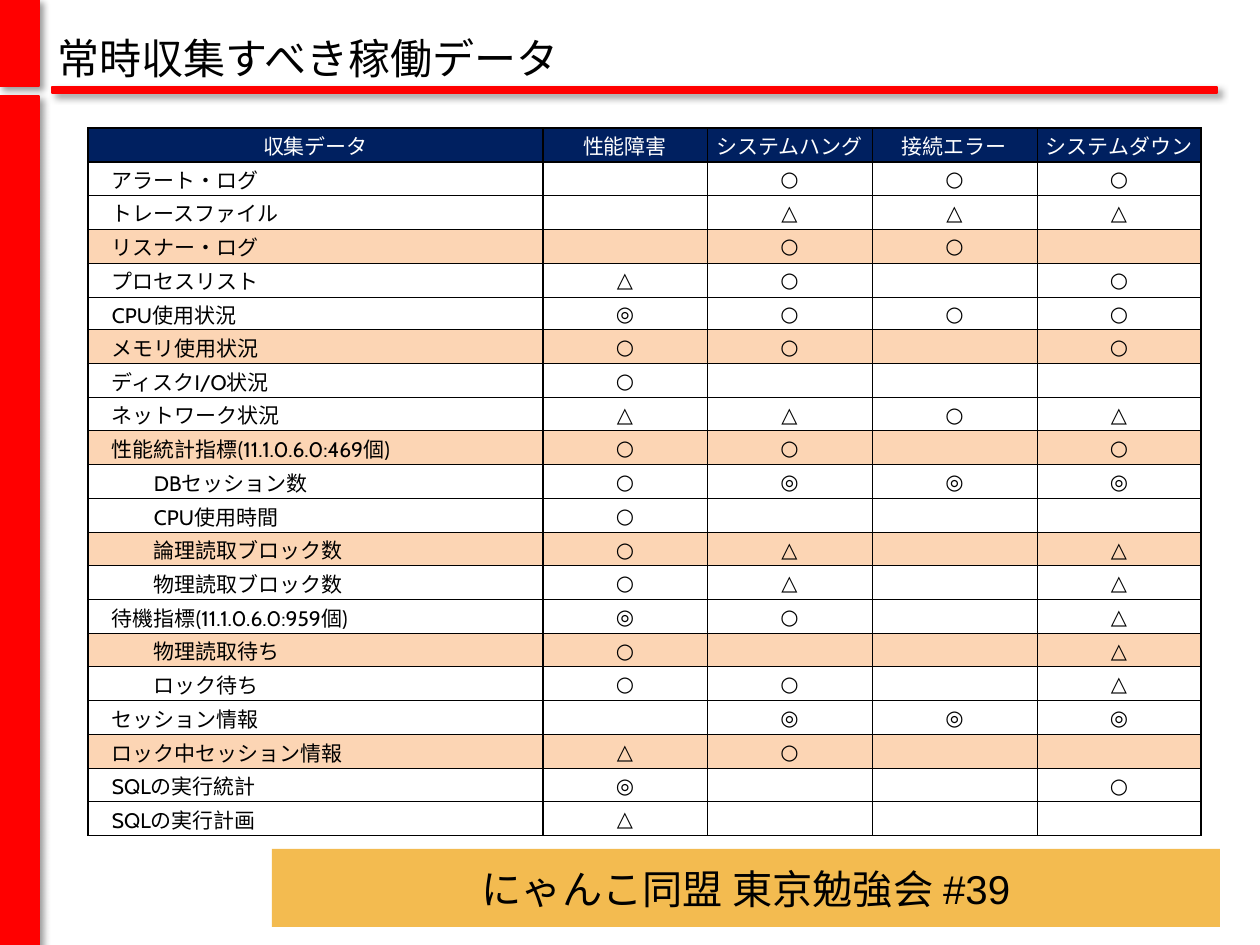
from lxml import etree
from pptx import Presentation, util as u
from pptx.dml.color import RGBColor
from pptx.enum import shapes, text
from pptx.oxml.ns import qn

TITLE = "常時収集すべき稼働データ"
FOOTER = "にゃんこ同盟 東京勉強会 #39"
HEADINGS = ("収集データ", "性能障害", "システムハング", "接続エラー", "システムダウン")
# Item, indent level, one mark per remaining column ("-" is an empty cell)
ITEMS = [
    ("アラート・ログ", 0, "-○○○"),
    ("トレースファイル", 0, "-△△△"),
    ("リスナー・ログ", 0, "-○○-"),
    ("プロセスリスト", 0, "△○-○"),
    ("CPU使用状況", 0, "◎○○○"),
    ("メモリ使用状況", 0, "○○-○"),
    ("ディスクI/O状況", 0, "○---"),
    ("ネットワーク状況", 0, "△△○△"),
    ("性能統計指標(11.1.0.6.0:469個)", 0, "○○-○"),
    ("DBセッション数", 1, "○◎◎◎"),
    ("CPU使用時間", 1, "○---"),
    ("論理読取ブロック数", 1, "○△-△"),
    ("物理読取ブロック数", 1, "○△-△"),
    ("待機指標(11.1.0.6.0:959個)", 0, "◎○-△"),
    ("物理読取待ち", 1, "○--△"),
    ("ロック待ち", 1, "○○-△"),
    ("セッション情報", 0, "-◎◎◎"),
    ("ロック中セッション情報", 0, "△○--"),
    ("SQLの実行統計", 0, "◎--○"),
    ("SQLの実行計画", 0, "△---"),
]
RED_BARS = [(0, 0, 39, 86), (0, 96, 39, 852), (52, 87, 1165, 6)]
TITLE_BOX = (45, 28, 762, 60)
FOOTER_BOX = (272, 849, 948, 78)
TABLE_BOX = (88, 128, 1113, 708)
ITEM_WIDTH = 455
ITEM_MARGIN, INDENT = 24, 42

RED = RGBColor(0xFF, 0x00, 0x00)
GOLD = RGBColor(0xF3, 0xBB, 0x50)
NAVY = RGBColor(0x00, 0x20, 0x60)
PEACH = RGBColor(0xFC, 0xD5, 0xB4)
WHITE = RGBColor(0xFF, 0xFF, 0xFF)
BLACK = RGBColor(0x00, 0x00, 0x00)


def px(n):
    return u.Emu(round(n * 914400 / 126))


def box(values):
    return [px(v) for v in values]


def split(total, count):
    """Whole-pixel sizes that add up to the total."""
    edges = [round(total * i / count) for i in range(count + 1)]
    return [b - a for a, b in zip(edges, edges[1:])]


def write(paragraph, words, font, size, color, align):
    paragraph.alignment = align
    run = paragraph.add_run()
    run.text = words
    run.font.name, run.font.size = font, u.Pt(size)
    run.font.color.rgb = color


def add_bar(slide, place, color):
    bar = slide.shapes.add_shape(shapes.MSO_SHAPE.RECTANGLE, *box(place))
    bar.shadow.inherit = False
    bar.fill.solid()
    bar.fill.fore_color.rgb = color
    return bar


def add_shadow(bar):
    effects = bar._element.spPr.find(qn("a:effectLst"))
    shadow = etree.SubElement(effects, qn("a:outerShdw"), blurRad=str(u.Pt(4)),
                              dist=str(u.Pt(3)), dir="2700000", rotWithShape="0")
    color = etree.SubElement(shadow, qn("a:srgbClr"), val="000000")
    etree.SubElement(color, qn("a:alpha"), val="40000")


def add_borders(cell, widths):
    for side, width in zip("LRTB", widths):
        line = etree.SubElement(cell._tc.get_or_add_tcPr(), qn(f"a:ln{side}"),
                                w=str(u.Pt(width)))
        fill = etree.SubElement(line, qn("a:solidFill"))
        etree.SubElement(fill, qn("a:srgbClr"), val=str(BLACK))


def fill_table(table, rows):
    last_row, last_col = len(rows) - 1, len(HEADINGS) - 1
    for r, (words, level) in enumerate(rows):
        header = r == 0
        for c, word in enumerate(words):
            cell = table.cell(r, c)
            is_item = c == 0 and not header
            # Heavy lines frame the table, its header and its first column
            heavy = (c <= 1, c in (0, last_col), r <= 1, r in (0, last_row))
            add_borders(cell, [1 if h else 0.5 for h in heavy])
            cell.fill.solid()
            cell.fill.fore_color.rgb = (
                NAVY if header else PEACH if r % 3 == 0 else WHITE)
            cell.vertical_anchor = text.MSO_ANCHOR.MIDDLE
            cell.margin_left = px(ITEM_MARGIN + level * INDENT if is_item else 1)
            cell.margin_right = cell.margin_top = px(1)
            cell.margin_bottom = 0
            paragraph = cell.text_frame.paragraphs[0]
            if word == "-":
                # Keeps an empty cell from stretching its row
                etree.SubElement(paragraph._p, qn("a:endParaRPr"), sz="1200")
            else:
                write(paragraph, word, "Cabin", 12, WHITE if header else BLACK,
                      text.PP_ALIGN.LEFT if is_item else text.PP_ALIGN.CENTER)


def main():
    deck = Presentation()
    deck.slide_width, deck.slide_height = u.Inches(10), u.Inches(7.5)
    slide = deck.slides.add_slide(deck.slide_layouts[5])

    # Footer banner
    footer = add_bar(slide, FOOTER_BOX, GOLD)
    footer.line.fill.background()
    footer.text_frame.word_wrap = True
    footer.text_frame.vertical_anchor = text.MSO_ANCHOR.MIDDLE
    write(footer.text_frame.paragraphs[0], FOOTER, "Arial", 23, BLACK,
          text.PP_ALIGN.CENTER)

    # Red side bars and title rule
    for place in RED_BARS:
        bar = add_bar(slide, place, RED)
        bar.line.color.rgb, bar.line.width = RED, u.Pt(0.75)
        add_shadow(bar)

    # Title
    title = slide.shapes.title
    title.left, title.top, title.width, title.height = box(TITLE_BOX)
    title.text_frame.auto_size = text.MSO_AUTO_SIZE.NONE
    title.text_frame.word_wrap = False
    title.text_frame.vertical_anchor = text.MSO_ANCHOR.MIDDLE
    write(title.text_frame.paragraphs[0], TITLE, "Arial Narrow", 24, BLACK,
          text.PP_ALIGN.LEFT)

    # Table of data to collect
    rows = [(HEADINGS, 0)] + [((item, *marks), level) for item, level, marks in ITEMS]
    table = slide.shapes.add_table(len(rows), len(HEADINGS), *box(TABLE_BOX)).table
    widths = [ITEM_WIDTH] + split(TABLE_BOX[2] - ITEM_WIDTH, len(HEADINGS) - 1)
    for column, width in zip(table.columns, widths):
        column.width = px(width)
    for row, height in zip(table.rows, split(TABLE_BOX[3], len(rows))):
        row.height = px(height)
    fill_table(table, rows)

    deck.save("out.pptx")


if __name__ == "__main__":
    main()
